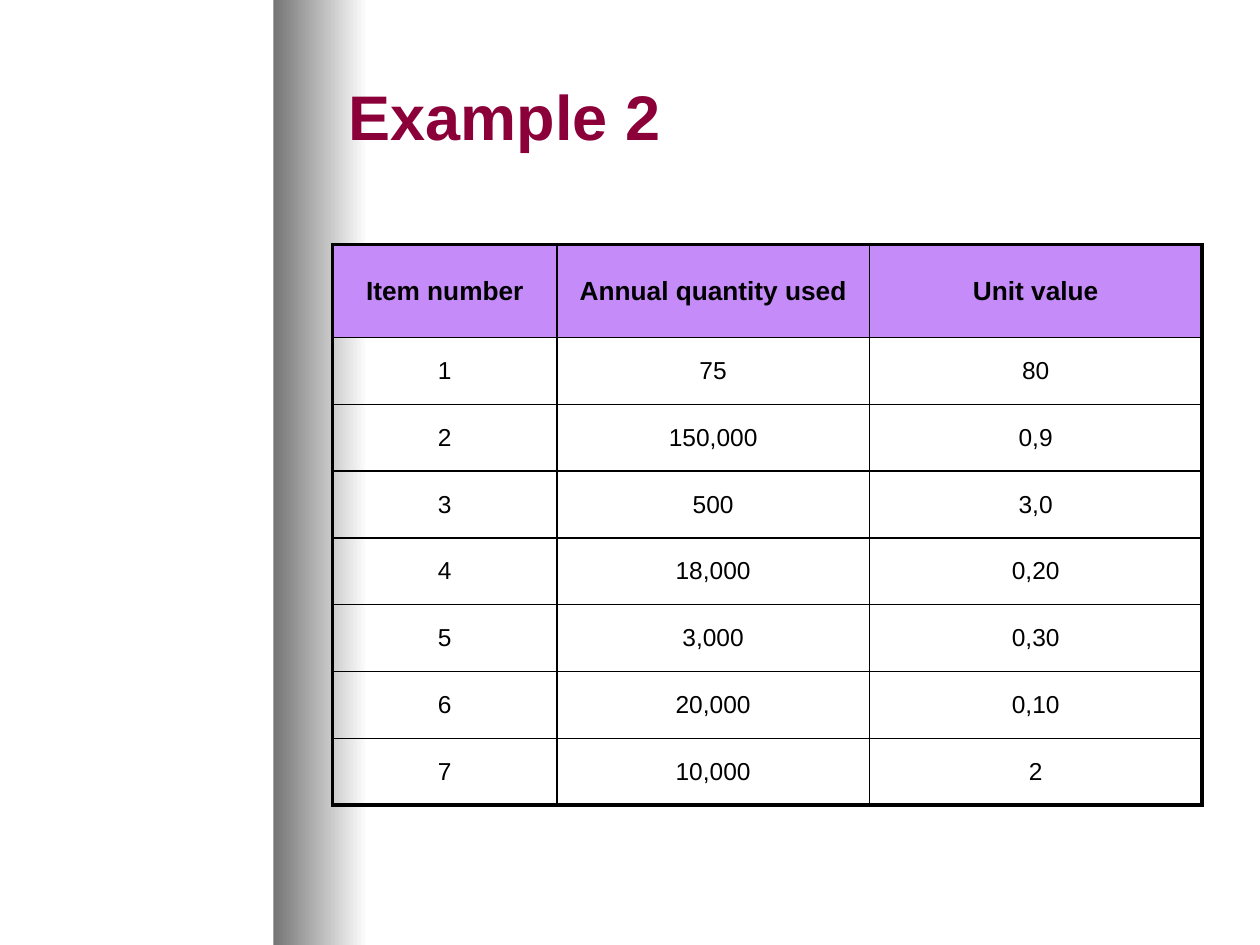
import pptx
import pptx.util
import pptx.dml.color
import pptx.enum.dml
import pptx.enum.shapes
import pptx.enum.text
import pptx.oxml
import pptx.oxml.ns
from dataclasses import dataclass

Inches = pptx.util.Inches
Pt = pptx.util.Pt

TITLE = "Example 2"
ROWS = [
    ("Item number", "Annual quantity used", "Unit value"),
    ("1", "75", "80"),
    ("2", "150,000", "0,9"),
    ("3", "500", "3,0"),
    ("4", "18,000", "0,20"),
    ("5", "3,000", "0,30"),
    ("6", "20,000", "0,10"),
    ("7", "10,000", "2"),
]
COLUMN_WIDTHS = (1.78, 2.48, 2.64)
HEADER_HEIGHT = 0.74
ROW_HEIGHT = 0.53


@dataclass(frozen=True)
class Theme:
    font: str = "Arial"
    title_color: str = "8C0039"
    text_color: str = "000000"
    header_fill: str = "C58BF9"
    band_dark: str = "757575"
    band_light: str = "FFFFFF"
    title_size: int = 36
    header_size: int = 15
    body_size: int = 14
    outer_line: float = 2.25
    inner_line: float = 1


THEME = Theme()


def rgb(color):
    return pptx.dml.color.RGBColor.from_string(color)


def add_run(paragraph, text, size, color, bold):
    run = paragraph.add_run()
    run.text = text
    run.font.name = THEME.font
    run.font.size = Pt(size)
    run.font.bold = bold
    run.font.color.rgb = rgb(color)


def set_borders(cell, widths):
    properties = cell._tc.get_or_add_tcPr()
    for position, (side, width) in enumerate(widths.items()):
        line = pptx.oxml.parse_xml(
            f'<a:{side} {pptx.oxml.ns.nsdecls("a")} w="{Pt(width)}">'
            f'<a:solidFill><a:srgbClr val="{THEME.text_color}"/></a:solidFill>'
            f"</a:{side}>"
        )
        properties.insert(position, line)


def add_band(slide):
    band = slide.shapes.add_shape(
        pptx.enum.shapes.MSO_SHAPE.RECTANGLE,
        Inches(2.17), Inches(0), Inches(0.75), Inches(7.5),
    )
    band.shadow.inherit = False
    band.line.fill.background()
    band.fill.gradient()
    band.fill.gradient_angle = 0
    for stop, color in zip(band.fill.gradient_stops, (THEME.band_dark, THEME.band_light)):
        stop.color.rgb = rgb(color)


def add_title(slide):
    title = slide.shapes.add_textbox(Inches(2.67), Inches(0.25), Inches(7), Inches(1.33))
    frame = title.text_frame
    frame.word_wrap = True
    frame.vertical_anchor = pptx.enum.text.MSO_ANCHOR.MIDDLE
    add_run(frame.paragraphs[0], TITLE, THEME.title_size, THEME.title_color, True)


def add_item_table(slide):
    last_row, last_column = len(ROWS) - 1, len(COLUMN_WIDTHS) - 1
    height = HEADER_HEIGHT + ROW_HEIGHT * last_row
    table = slide.shapes.add_table(
        len(ROWS), len(COLUMN_WIDTHS),
        Inches(2.64), Inches(1.94), Inches(sum(COLUMN_WIDTHS)), Inches(height),
    ).table
    table.horz_banding = False
    table.first_row = False
    for column, width in zip(table.columns, COLUMN_WIDTHS):
        column.width = Inches(width)
    for r, values in enumerate(ROWS):
        header = r == 0
        table.rows[r].height = Inches(HEADER_HEIGHT if header else ROW_HEIGHT)
        for c, value in enumerate(values):
            cell = table.cell(r, c)
            cell.vertical_anchor = pptx.enum.text.MSO_ANCHOR.MIDDLE
            if header:
                cell.fill.solid()
                cell.fill.fore_color.rgb = rgb(THEME.header_fill)
            else:
                cell.fill.background()
            paragraph = cell.text_frame.paragraphs[0]
            paragraph.alignment = pptx.enum.text.PP_ALIGN.CENTER
            size = THEME.header_size if header else THEME.body_size
            add_run(paragraph, value, size, THEME.text_color, header)
            outer_sides = {
                "lnL": c == 0, "lnR": c == last_column,
                "lnT": header, "lnB": r == last_row,
            }
            set_borders(cell, {
                side: THEME.outer_line if outer else THEME.inner_line
                for side, outer in outer_sides.items()
            })


def main():
    presentation = pptx.Presentation()
    presentation.slide_width = Inches(10)
    presentation.slide_height = Inches(7.5)
    slide = presentation.slides.add_slide(presentation.slide_layouts[6])
    add_band(slide)
    add_title(slide)
    add_item_table(slide)
    presentation.save("out.pptx")


if __name__ == "__main__":
    main()
